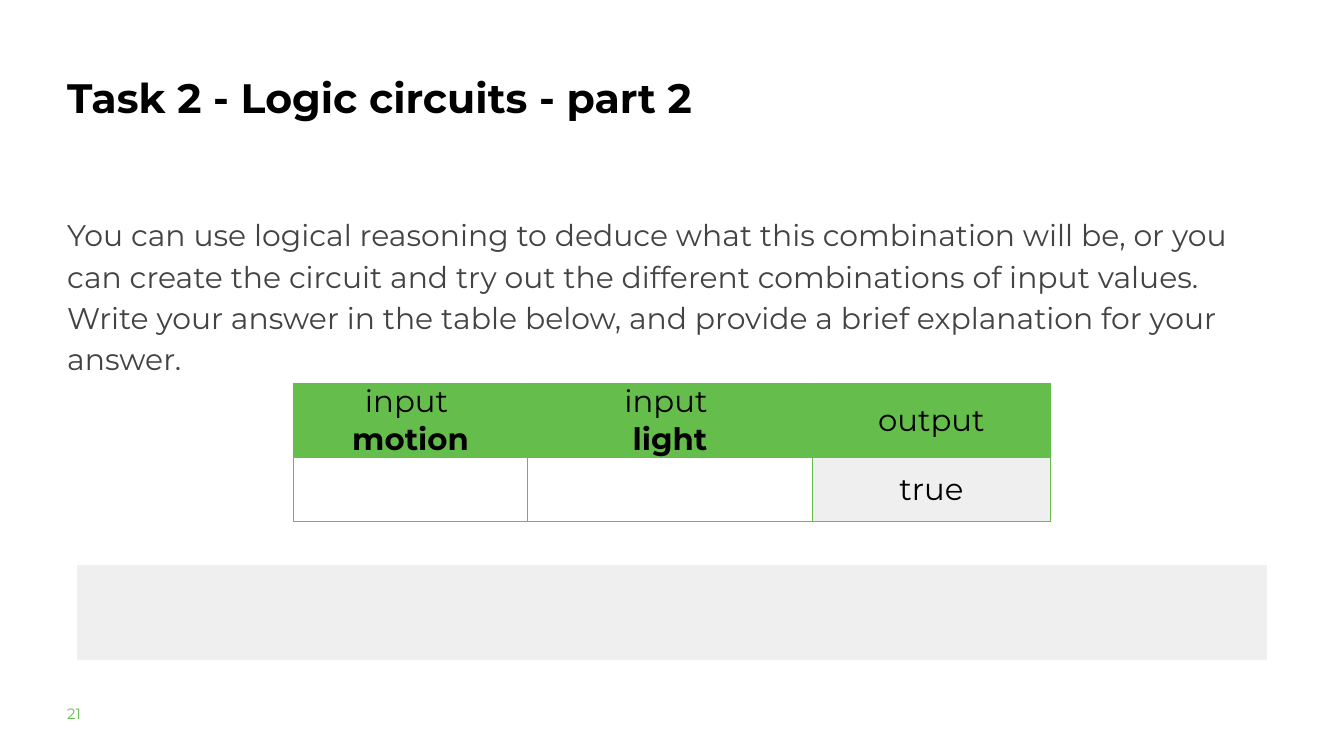
from lxml.etree import SubElement
from pptx import Presentation
from pptx.dml.color import RGBColor
from pptx.enum.text import MSO_ANCHOR, PP_ALIGN
from pptx.oxml.ns import qn
from pptx.util import Inches, Pt

GREEN, GREY, WHITE, BLACK = "65BE4B", "EFEFEF", "FFFFFF", "000000"


def colour(value):
    return RGBColor.from_string(value)


class TaskSlide:
    font = "Montserrat"

    def __init__(self, slide):
        self.slide = slide

    def style(self, paragraph, size, ink, bold=False):
        font = paragraph.font
        font.name, font.size, font.bold = self.font, Pt(size), bold
        font.color.rgb = colour(ink)

    def text(self, place, wording, size, ink, bold=False, spacing=1.0):
        frame = self.slide.shapes.add_textbox(*map(Inches, place)).text_frame
        frame.word_wrap = True
        frame.margin_left = frame.margin_right = 0
        frame.margin_top = frame.margin_bottom = 0
        paragraph = frame.paragraphs[0]
        paragraph.text = wording
        paragraph.line_spacing = spacing
        self.style(paragraph, size, ink, bold)

    def table(self, left, top, widths, heights, line, line_width):
        grid = self.slide.shapes.add_table(
            len(heights), len(widths), Inches(left), Inches(top),
            Inches(sum(widths)), Inches(sum(heights))).table
        grid.first_row = grid.horz_banding = False
        for column, width in zip(grid.columns, widths):
            column.width = Inches(width)
        for row, height in zip(grid.rows, heights):
            row.height = Inches(height)
        for cell in grid.iter_cells():
            self.borders(cell, line, line_width)
            cell.fill.background()
        return grid

    def borders(self, cell, line, width):
        properties = cell._tc.get_or_add_tcPr()
        for side in ("a:lnL", "a:lnR", "a:lnT", "a:lnB"):
            edge = SubElement(properties, qn(side), w=str(Pt(width)))
            fill = SubElement(edge, qn("a:solidFill"))
            SubElement(fill, qn("a:srgbClr"), val=line)

    def cell(self, cell, fill, lines=(), padding=0.0):
        """Fill a cell; each line is a (wording, bold) pair."""
        cell.fill.solid()
        cell.fill.fore_color.rgb = colour(fill)
        cell.vertical_anchor = MSO_ANCHOR.MIDDLE
        cell.margin_left = cell.margin_right = Inches(0.2)
        cell.margin_top = cell.margin_bottom = Inches(padding)
        frame = cell.text_frame
        for number, (wording, bold) in enumerate(lines):
            paragraph = frame.add_paragraph() if number else frame.paragraphs[0]
            paragraph.text = wording
            paragraph.alignment = PP_ALIGN.CENTER
            self.style(paragraph, 33, BLACK, bold)


def main():
    deck = Presentation()
    deck.slide_width, deck.slide_height = Inches(20), Inches(11.25)
    task = TaskSlide(deck.slides.add_slide(deck.slide_layouts[6]))

    # Title, page number and instructions
    task.text((1, 0.97, 17.76, 1.78), "Task 2 - Logic circuits - part 2",
              44, BLACK, bold=True, spacing=1.15)
    task.text((1, 10.48, 1.57, 0.39), "21", 16, GREEN)
    task.text((1, 3.15, 17.99, 6.52),
              "You can use logical reasoning to deduce what this combination "
              "will be, or you can create the circuit and try out the different "
              "combinations of input values. Write your answer in the table "
              "below, and provide a brief explanation for your answer.",
              32, "434343", spacing=1.15)

    # Truth table
    truth_table = task.table(4.37, 5.7, (3.48, 4.24, 3.54), (0.88, 0.88), GREEN, 0.75)
    headings = (
        [("input ", False), ("motion", True)],
        [("input ", False), ("light", True)],
        [("output", False)],
    )
    for column, heading in enumerate(headings):
        task.cell(truth_table.cell(0, column), GREEN, heading)
    task.cell(truth_table.cell(1, 2), GREY, [("true", False)], padding=0.2)

    # Space for the explanation
    explanation = task.table(1.14, 8.4, (17.72,), (1.43,), WHITE, 1)
    task.cell(explanation.cell(0, 0), GREY)

    deck.save("out.pptx")


if __name__ == "__main__":
    main()
